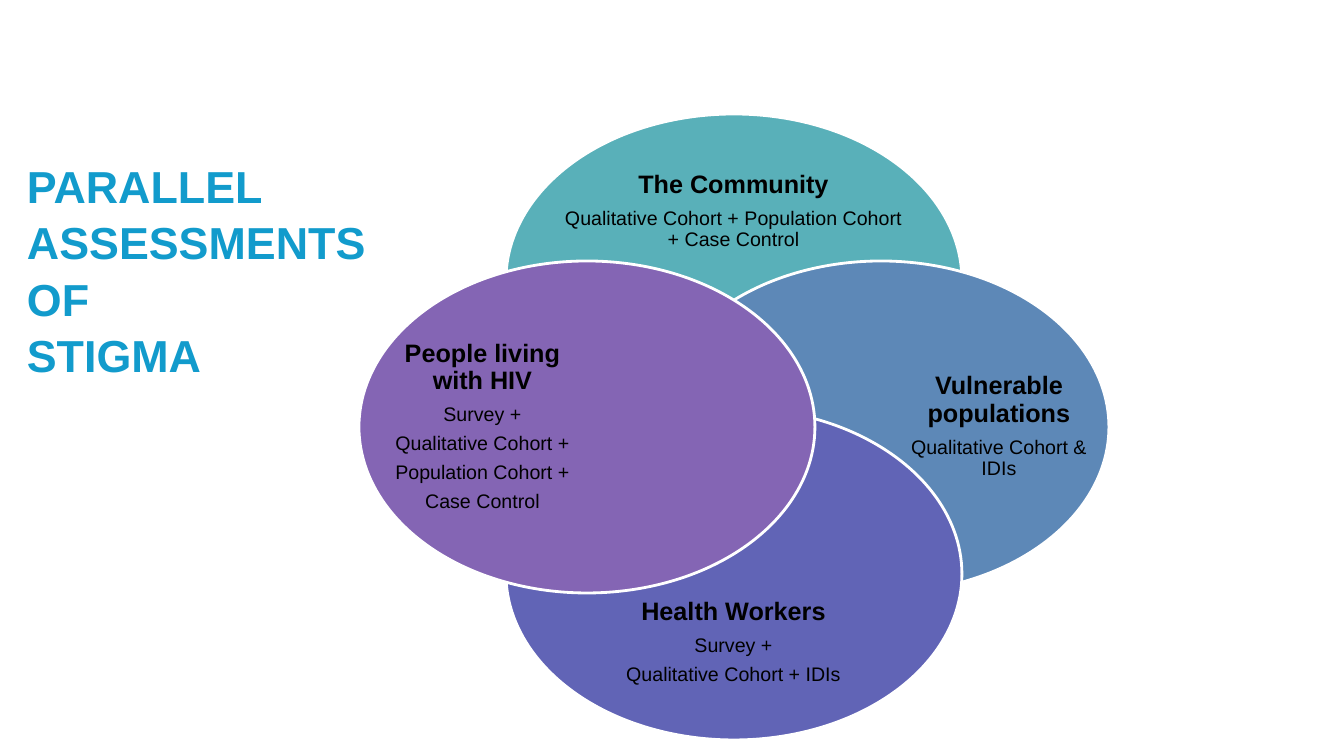
import pptx
import pptx.util
import pptx.dml.color
import pptx.enum.shapes
import pptx.enum.text

RGB = pptx.dml.color.RGBColor
Pt = pptx.util.Pt
Align = pptx.enum.text.PP_ALIGN
TEAL = RGB(0x59, 0xB0, 0xB9)
BLUE = RGB(0x5D, 0x88, 0xB7)
INDIGO = RGB(0x61, 0x64, 0xB6)
PURPLE = RGB(0x84, 0x65, 0xB4)
CYAN = RGB(0x12, 0x9B, 0xCC)
BLACK = RGB(0, 0, 0)
WHITE = RGB(255, 255, 255)


def px(*sizes):
    """Turn pixels, 100.8 to the inch, into EMU."""
    return [round(n * 914400 / 100.8) for n in sizes]


def write(frame, lines, color, looks):
    """Fill frame with lines; looks holds paragraph values for the first and later lines."""
    for i, line in enumerate(lines):
        para = frame.paragraphs[0] if i == 0 else frame.add_paragraph()
        para.text = line
        para.font.name = "Arial"
        para.font.color.rgb = color
        size, bold, form = looks[min(i, 1)]
        para.font.size = Pt(size)
        para.font.bold = bold
        for key, value in form.items():
            setattr(para, key, value)


deck = pptx.Presentation()
deck.slide_width, deck.slide_height = px(1344, 756)
slide = deck.slides.add_slide(deck.slide_layouts[6])
shapes = slide.shapes

# Four ovals, one step away from a shared centre
MID_X, MID_Y, STEP = 734, 427, 147
WIDE, HIGH = 456, 332
groups = [
    (0, -1, TEAL, (558, 159, 351, 105),
     ["The Community", "Qualitative Cohort + Population Cohort + Case Control"]),
    (1, 0, BLUE, (898, 299, 202, 255),
     ["Vulnerable populations", "Qualitative Cohort & IDIs"]),
    (0, 1, INDIGO, (558, 590, 351, 105),
     ["Health Workers", "Survey +", "Qualitative Cohort + IDIs"]),
    (-1, 0, PURPLE, (395, 299, 175, 255),
     ["People living with HIV", "Survey +", "Qualitative Cohort +",
      "Population Cohort +", "Case Control"]),
]
base = {"alignment": Align.CENTER, "line_spacing": 0.9}
looks = [(18, True, {**base, "space_after": Pt(7)}),
         (14, False, {**base, "space_after": Pt(5.5)})]
inset = {"margin_left": 0, "margin_top": 0, "margin_right": 0, "margin_bottom": 0,
         "word_wrap": True, "vertical_anchor": pptx.enum.text.MSO_ANCHOR.MIDDLE}

for dx, dy, color, area, lines in groups:
    left = MID_X + dx * STEP - WIDE // 2
    top = MID_Y + dy * STEP - HIGH // 2
    oval = shapes.add_shape(pptx.enum.shapes.MSO_SHAPE.OVAL, *px(left, top, WIDE, HIGH))
    oval.shadow.inherit = False
    oval.fill.solid()
    oval.fill.fore_color.rgb = color
    oval.line.color.rgb = WHITE
    oval.line.width = Pt(2)

    frame = shapes.add_textbox(*px(*area)).text_frame
    for key, value in inset.items():
        setattr(frame, key, value)
    write(frame, lines, BLACK, looks)

title = shapes.add_textbox(*px(17, 151, 375, 228)).text_frame
title.word_wrap = False
title.auto_size = pptx.enum.text.MSO_AUTO_SIZE.SHAPE_TO_FIT_TEXT
head = (32, True, {"alignment": Align.LEFT, "line_spacing": 1.05})
write(title, ["PARALLEL", "ASSESSMENTS", "OF", "STIGMA"], CYAN, [head, head])

deck.save("out.pptx")
